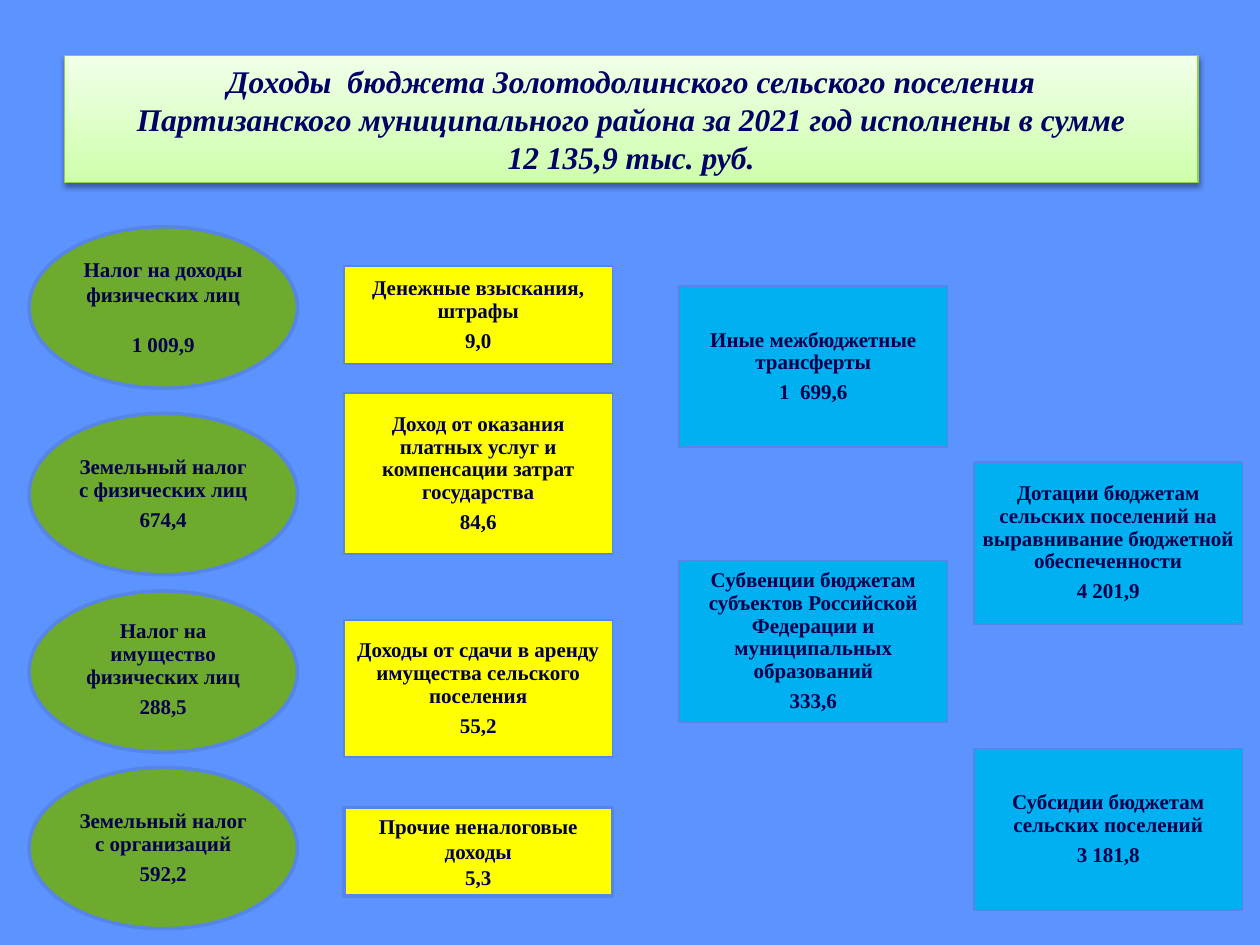
from lxml.etree import SubElement
from pptx import Presentation
from pptx.dml.color import RGBColor
from pptx.enum.shapes import MSO_SHAPE as Shape
from pptx.enum.text import MSO_ANCHOR as Anchor, PP_ALIGN as Align
from pptx.oxml.ns import qn
from pptx.util import Pt

SKY = RGBColor(0x5D, 0x93, 0xFF)
OUTLINE = RGBColor(0x54, 0x85, 0xE7)
GREEN = RGBColor(0x6E, 0xAA, 0x2E)
YELLOW = RGBColor(0xFF, 0xFF, 0x00)
BLUE = RGBColor(0x00, 0xB0, 0xF0)
INK = RGBColor(0x00, 0x00, 0x4D)
TITLE_INK = RGBColor(0x00, 0x00, 0x66)
TITLE_EDGE = RGBColor(0x8F, 0xCF, 0x4B)
TITLE_BOTTOM = RGBColor(0xCE, 0xFF, 0xAC)
TITLE_TOP = RGBColor(0xF1, 0xFF, 0xE9)

TITLE_FONT = {"name": "Times New Roman", "size": Pt(18), "bold": True, "italic": True}
ITEM_FONT = {"name": "Times New Roman", "size": Pt(12), "bold": True}
TIGHT = {"line_spacing": 0.9, "space_after": Pt(4.2)}
SNUG = {"vertical_anchor": Anchor.MIDDLE, "margin_left": Pt(3.6), "margin_right": Pt(3.6)}
ROOMY = {"vertical_anchor": Anchor.TOP, "margin_left": Pt(7.2), "margin_right": Pt(7.2)}

ITEM_WIDTH, ITEM_HEIGHT = 153.4, 92.2
TAX_LEFT, INCOME_LEFT, TRANSFER_LEFT, GRANT_LEFT = 16.6, 196.6, 388.1, 556.6

TAXES = [  # top, name, value, frame format, paragraph format, gap before the value
    (129.6, "Налог на доходы физических лиц", "1 009,9", ROOMY, {}, 13.8),
    (236.2, "Земельный налог с физических лиц", "674,4", SNUG, TIGHT, 0),
    (337.7, "Налог на имущество физических лиц", "288,5", ROOMY, TIGHT, 0),
    (438.5, "Земельный налог с организаций", "592,2", SNUG, TIGHT, 0),
]
INCOMES = [  # top, height, name, value
    (151.9, 56.2, "Денежные взыскания, штрафы", "9,0"),
    (224.6, ITEM_HEIGHT, "Доход от оказания платных услуг и компенсации затрат государства", "84,6"),
    (354.2, 78.5, "Доходы от сдачи в аренду имущества сельского поселения", "55,2"),
]
TRANSFERS = [  # left, top, name, value
    (TRANSFER_LEFT, 163.4, "Иные межбюджетные трансферты", "1  699,6"),
    (TRANSFER_LEFT, 320.4, "Субвенции бюджетам субъектов Российской Федерации "
     "и муниципальных образований", "333,6"),
    (GRANT_LEFT, 264.2, "Дотации бюджетам сельских поселений на выравнивание "
     "бюджетной обеспеченности", "4 201,9"),
    (GRANT_LEFT, 427.7, "Субсидии бюджетам сельских поселений", "3 181,8"),
]


def apply(target, formats):
    for name, value in formats.items():
        setattr(target, name, value)


class BudgetSlide:
    def __init__(self, deck):
        self.page = deck.slides.add_slide(deck.slide_layouts[6])
        background = self.page.background.fill
        background.solid()
        background.fore_color.rgb = SKY

    def shape(self, kind, left, top, width, height, edge, weight):
        box = self.page.shapes.add_shape(kind, Pt(left), Pt(top), Pt(width), Pt(height))
        box.shadow.inherit = False
        box.line.color.rgb = edge
        box.line.width = Pt(weight)
        box.text_frame.word_wrap = True
        return box

    def set_text(self, para, text, font, color):
        para.text = text
        para.alignment = Align.CENTER
        for span in para.runs:
            apply(span.font, font)
            span.font.color.rgb = color

    def title(self, text):
        box = self.shape(Shape.RECTANGLE, 36.7, 31.7, 648, 72.7, TITLE_EDGE, 0.75)
        box.fill.gradient()
        box.fill.gradient_angle = 90
        for stop, color in zip(box.fill.gradient_stops, (TITLE_BOTTOM, TITLE_TOP)):
            stop.color.rgb = color
        self.cast_shadow(box)
        box.text_frame.vertical_anchor = Anchor.MIDDLE
        self.set_text(box.text_frame.paragraphs[0], text, TITLE_FONT, TITLE_INK)

    def cast_shadow(self, box):
        """Give the box a soft shadow straight below it."""
        effects = box._element.spPr.find(qn("a:effectLst"))
        shadow = SubElement(effects, qn("a:outerShdw"), blurRad=str(Pt(3.1)),
                            dist=str(Pt(1.6)), dir="5400000", rotWithShape="0")
        color = SubElement(shadow, qn("a:srgbClr"), val="000000")
        SubElement(color, qn("a:alpha"), val="38000")

    def item(self, kind, left, top, height, color, name, value,
             frame=SNUG, spacing=TIGHT, gap=0, weight=2):
        """Add one source of income: its name with the value below."""
        box = self.shape(kind, left, top, ITEM_WIDTH, height, OUTLINE, weight)
        box.fill.solid()
        box.fill.fore_color.rgb = color
        apply(box.text_frame, frame)
        label = box.text_frame.paragraphs[0]
        amount = box.text_frame.add_paragraph()
        for para, text in ((label, name), (amount, value)):
            self.set_text(para, text, ITEM_FONT, INK)
            apply(para, spacing)
        if gap:
            amount.space_before = Pt(gap)


def main():
    deck = Presentation()
    deck.slide_width, deck.slide_height = Pt(720), Pt(540)
    slide = BudgetSlide(deck)
    slide.title("Доходы  бюджета Золотодолинского сельского поселения\n"
                "Партизанского муниципального района за 2021 год исполнены в сумме\n"
                "12 135,9 тыс. руб.")
    for top, name, value, frame, spacing, gap in TAXES:
        slide.item(Shape.OVAL, TAX_LEFT, top, ITEM_HEIGHT, GREEN, name, value,
                   frame, spacing, gap)
    for top, height, name, value in INCOMES:
        slide.item(Shape.RECTANGLE, INCOME_LEFT, top, height, YELLOW, name, value, weight=1)
    slide.item(Shape.RECTANGLE, INCOME_LEFT, 461.5, 50.4, YELLOW,
               "Прочие неналоговые доходы", "5,3", ROOMY, {})
    for left, top, name, value in TRANSFERS:
        slide.item(Shape.RECTANGLE, left, top, ITEM_HEIGHT, BLUE, name, value, weight=1)
    deck.save("out.pptx")


if __name__ == "__main__":
    main()
